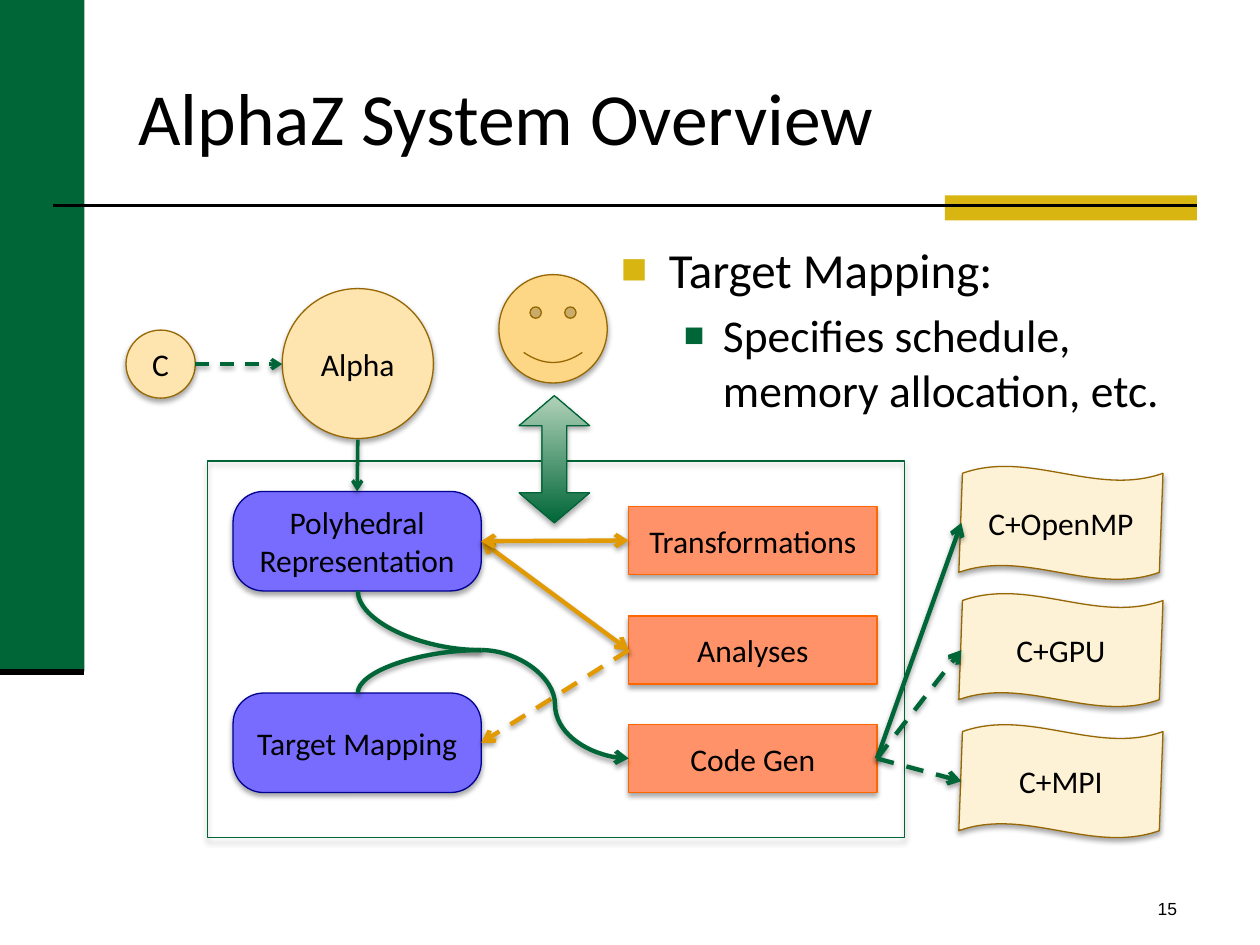
from lxml.etree import SubElement
from pptx import Presentation
from pptx.dml.color import RGBColor
from pptx.enum.dml import MSO_LINE
from pptx.enum.shapes import MSO_CONNECTOR, MSO_SHAPE
from pptx.enum.text import MSO_ANCHOR, PP_ALIGN
from pptx.oxml.ns import qn
from pptx.util import Inches, Pt

BLACK = RGBColor(0x00, 0x00, 0x00)
GREEN = RGBColor(0x00, 0x66, 0x38)
DARK_GREEN = RGBColor(0x00, 0x64, 0x37)
PALE_GREEN = RGBColor(0xB1, 0xD2, 0xB9)
GOLD = RGBColor(0xD8, 0xB5, 0x11)
AMBER = RGBColor(0xE1, 0x9A, 0x03)
BROWN = RGBColor(0x96, 0x67, 0x02)
SAND = RGBColor(0xFE, 0xE4, 0xAE)
CREAM = RGBColor(0xFE, 0xF2, 0xD6)
FACE = RGBColor(0xFD, 0xD7, 0x85)
VIOLET = RGBColor(0x78, 0x6C, 0xFF)
NAVY = RGBColor(0x00, 0x00, 0x90)
SALMON = RGBColor(0xFF, 0x92, 0x68)
ORANGE = RGBColor(0xFF, 0x66, 0x00)


def set_shadow(shape, opacity=None, distance=1.8):
    """Give a shape a soft shadow below it, or none without an opacity."""
    effects = SubElement(shape._element.spPr, qn("a:effectLst"))
    if opacity is None:
        return
    shadow = SubElement(effects, qn("a:outerShdw"), blurRad=str(Pt(3.1)),
                        dist=str(Pt(distance)), dir="5400000", rotWithShape="0")
    color = SubElement(shadow, qn("a:srgbClr"), val=str(BLACK))
    SubElement(color, qn("a:alpha"), val=str(opacity * 1000))


def format_text(paragraph, size, font="Calibri"):
    """Set the font of a paragraph."""
    paragraph.font.name = font
    paragraph.font.size = Pt(size)
    paragraph.font.color.rgb = BLACK


def add_bar(slide, box, color):
    """Add a plain coloured bar."""
    bar = slide.shapes.add_shape(MSO_SHAPE.RECTANGLE, *map(Inches, box))
    bar.fill.solid()
    bar.fill.fore_color.rgb = color
    bar.line.fill.background()
    bar.shadow.inherit = False


def add_node(slide, kind, box, fill, line, text="", adjustments=()):
    """Add a shadowed diagram shape with a centred label."""
    shape = slide.shapes.add_shape(kind, *map(Inches, box))
    for index, value in enumerate(adjustments):
        shape.adjustments[index] = value
    if fill is None:
        shape.fill.background()
    else:
        shape.fill.solid()
        shape.fill.fore_color.rgb = fill
    shape.line.color.rgb = line
    shape.line.width = Pt(0.75)
    set_shadow(shape, 35)
    if text:
        frame = shape.text_frame
        frame.word_wrap = True
        frame.vertical_anchor = MSO_ANCHOR.MIDDLE
        frame.text = text
        frame.paragraphs[0].alignment = PP_ALIGN.CENTER
        format_text(frame.paragraphs[0], 18)
    return shape


def add_line(slide, start, end, color, width, kind=MSO_CONNECTOR.STRAIGHT, dashed=False,
             arrows=(), shadow=True, begin=None, finish=None):
    """Add a connector, optionally joined to (shape, site) pairs."""
    line = slide.shapes.add_connector(kind, *map(Inches, start + end))
    if begin:
        line.begin_connect(*begin)
    if finish:
        line.end_connect(*finish)
    line.line.color.rgb = color
    line.line.width = Pt(width)
    if dashed:
        line.line.dash_style = MSO_LINE.DASH
    for arrow in arrows:
        SubElement(line.line._get_or_add_ln(), qn(f"a:{arrow}"), type="arrow")
    set_shadow(line, 38 if shadow else None, 1.6)
    return line


def add_text(slide, box, text, size, font="Calibri", anchor=MSO_ANCHOR.TOP,
             alignment=PP_ALIGN.LEFT):
    """Add a text box holding one paragraph."""
    frame = slide.shapes.add_textbox(*map(Inches, box)).text_frame
    frame.word_wrap = True
    frame.vertical_anchor = anchor
    frame.text = text
    frame.paragraphs[0].alignment = alignment
    format_text(frame.paragraphs[0], size, font)


def add_bullets(slide, box, items):
    """Add a bulleted list of (text, size, level, margin, hang, colour, bullet percent)."""
    frame = slide.shapes.add_textbox(*map(Inches, box)).text_frame
    frame.word_wrap = True
    for index, (text, size, level, margin, hang, color, percent) in enumerate(items):
        paragraph = frame.add_paragraph() if index else frame.paragraphs[0]
        paragraph.text = text
        paragraph.level = level
        if index:
            paragraph.space_before = Pt(size * 0.2)
        properties = paragraph._p.get_or_add_pPr()
        properties.set("marL", str(Inches(margin)))
        properties.set("indent", str(-Inches(hang)))
        bullet_color = SubElement(properties, qn("a:buClr"))
        SubElement(bullet_color, qn("a:srgbClr"), val=str(color))
        SubElement(properties, qn("a:buSzPct"), val=str(percent * 1000))
        SubElement(properties, qn("a:buFont"), typeface="Arial")
        SubElement(properties, qn("a:buChar"), char="■")
        format_text(paragraph, size)


def add_frame(slide):
    """Add the decoration, title, bullets and page number."""
    add_bar(slide, (0, 0, 0.67, 5.33), GREEN)
    add_bar(slide, (7.5, 1.55, 2, 0.2), GOLD)
    add_line(slide, (0.42, 1.63), (9.5, 1.63), BLACK, 1.5, shadow=False)
    add_line(slide, (0, 5.33), (0.67, 5.33), BLACK, 3.5, shadow=False)
    add_text(slide, (1, 0.3, 8.5, 1.25), "AlphaZ System Overview", 42,
             anchor=MSO_ANCHOR.MIDDLE)
    add_bullets(slide, (4.83, 1.85, 4.94, 4.86), [
        ("Target Mapping:", 28, 0, 0.38, 0.38, GOLD, 90),
        ("Specifies schedule, memory allocation, etc.", 26, 1, 0.81, 0.31, GREEN, 75),
    ])
    add_text(slide, (7.36, 7.08, 2.08, 0.25), "15", 10, "Arial", alignment=PP_ALIGN.RIGHT)


def add_diagram(slide):
    """Add the system diagram."""
    tail, both = ("tailEnd",), ("headEnd", "tailEnd")
    add_node(slide, MSO_SHAPE.OVAL, (1, 2.62, 0.55, 0.54), SAND, BROWN, "C")
    add_node(slide, MSO_SHAPE.OVAL, (2.24, 2.29, 1.2, 1.19), SAND, BROWN, "Alpha")
    add_line(slide, (1.55, 2.89), (2.24, 2.89), GREEN, 2, dashed=True, arrows=tail)
    add_node(slide, MSO_SHAPE.RECTANGLE, (1.65, 3.66, 5.53, 2.99), None, DARK_GREEN)

    polyhedral, mapping = [
        add_node(slide, MSO_SHAPE.ROUNDED_RECTANGLE, (1.85, top, 1.97, 0.79), VIOLET, NAVY,
                 text, (0.307,))
        for top, text in ((3.9, "Polyhedral Representation"), (5.5, "Target Mapping"))]
    transformations, analyses, code_gen = [
        add_node(slide, MSO_SHAPE.RECTANGLE, (4.99, top, 1.97, 0.54), SALMON, ORANGE, text)
        for top, text in ((4.02, "Transformations"), (4.89, "Analyses"), (5.75, "Code Gen"))]

    add_line(slide, (2.84, 3.49), (2.84, 3.9), GREEN, 2, arrows=tail, finish=(polyhedral, 0))
    for target, height in ((analyses, 5.16), (transformations, 4.29)):
        add_line(slide, (3.82, 4.29), (4.99, height), AMBER, 2.5, arrows=both,
                 begin=(polyhedral, 3), finish=(target, 1))
    add_line(slide, (4.99, 5.16), (3.82, 5.89), AMBER, 2.5, dashed=True, arrows=tail,
             begin=(analyses, 1), finish=(mapping, 3))

    junction = (3.82, 5.16)
    for height in (4.69, 5.5):
        curve = add_line(slide, junction, (2.84, height), GREEN, 2.5, MSO_CONNECTOR.CURVE)
        curve._element.spPr.find(qn("a:prstGeom")).set("prst", "curvedConnector2")
    add_line(slide, junction, (4.99, 6.02), GREEN, 2.5, MSO_CONNECTOR.CURVE, arrows=tail)

    outputs = ((3.7, "C+OpenMP", 4.15, False), (4.71, "C+GPU", 5.16, True),
               (5.75, "C+MPI", 6.2, True))
    for top, text, middle, dashed in outputs:
        add_node(slide, MSO_SHAPE.WAVE, (7.61, top, 1.62, 0.9), CREAM, BROWN, text,
                 (0.063, -0.009))
        add_line(slide, (6.96, 6.02), (7.63, middle), GREEN, 2.5, dashed=dashed, arrows=tail,
                 begin=(code_gen, 3))

    add_node(slide, MSO_SHAPE.SMILEY_FACE, (3.96, 2.18, 0.86, 0.86), FACE, BROWN,
             adjustments=(0.047,))
    arrow = add_node(slide, MSO_SHAPE.UP_DOWN_ARROW, (4.12, 3.14, 0.56, 1.01), GREEN,
                     DARK_GREEN, adjustments=(0.351, 0.426))
    guides = arrow._element.spPr.findall(f".//{qn('a:gd')}")
    for number, guide in enumerate(guides, start=1):
        guide.set("name", f"adj{number}")
    arrow.fill.gradient()
    arrow.fill.gradient_angle = 90
    for stop, color in zip(arrow.fill.gradient_stops, (GREEN, PALE_GREEN)):
        stop.color.rgb = color


def main():
    """Build and save the slide."""
    presentation = Presentation()
    presentation.slide_width = Inches(10)
    presentation.slide_height = Inches(7.5)
    slide = presentation.slides.add_slide(presentation.slide_layouts[6])
    add_frame(slide)
    add_diagram(slide)
    presentation.save("out.pptx")


if __name__ == "__main__":
    main()
